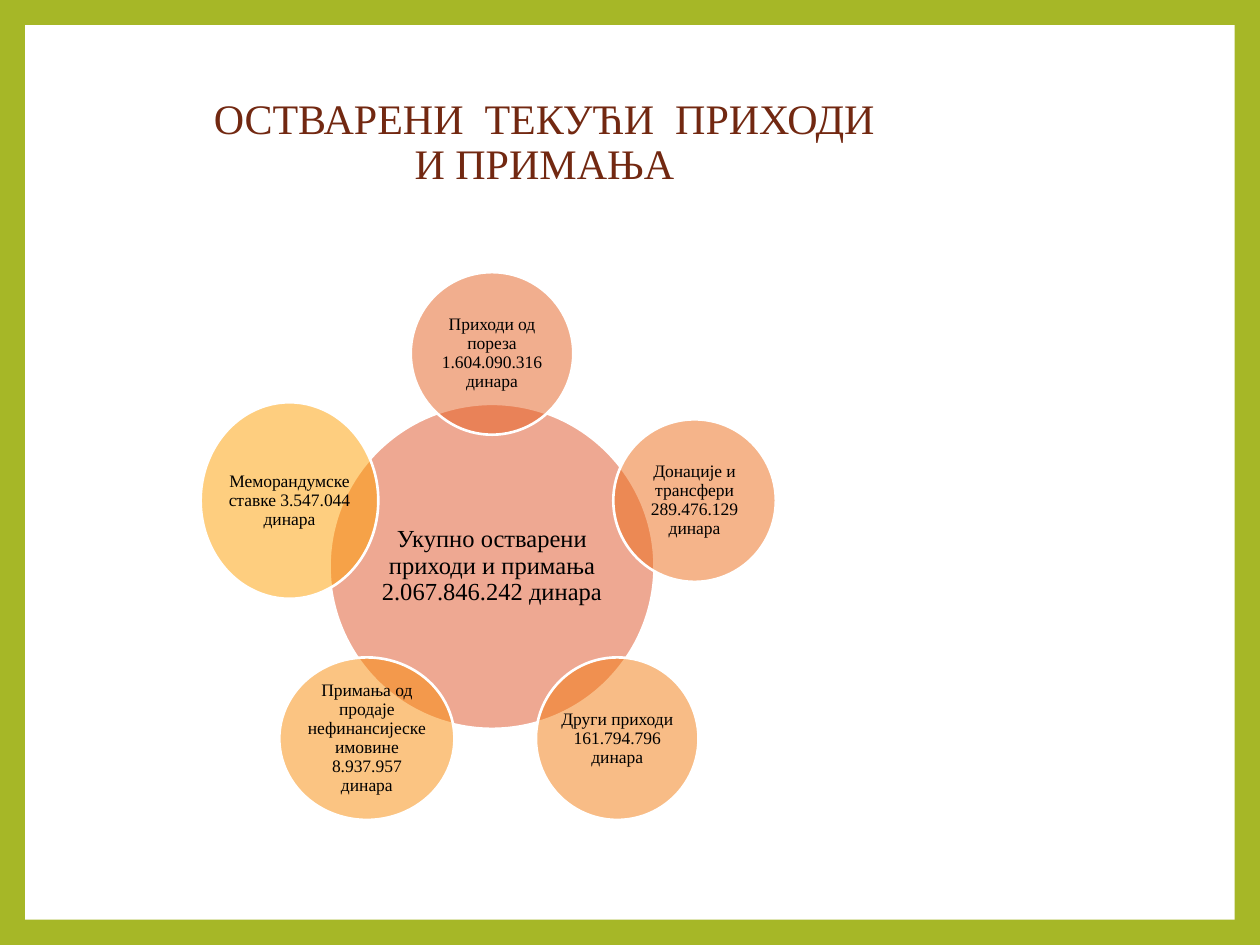
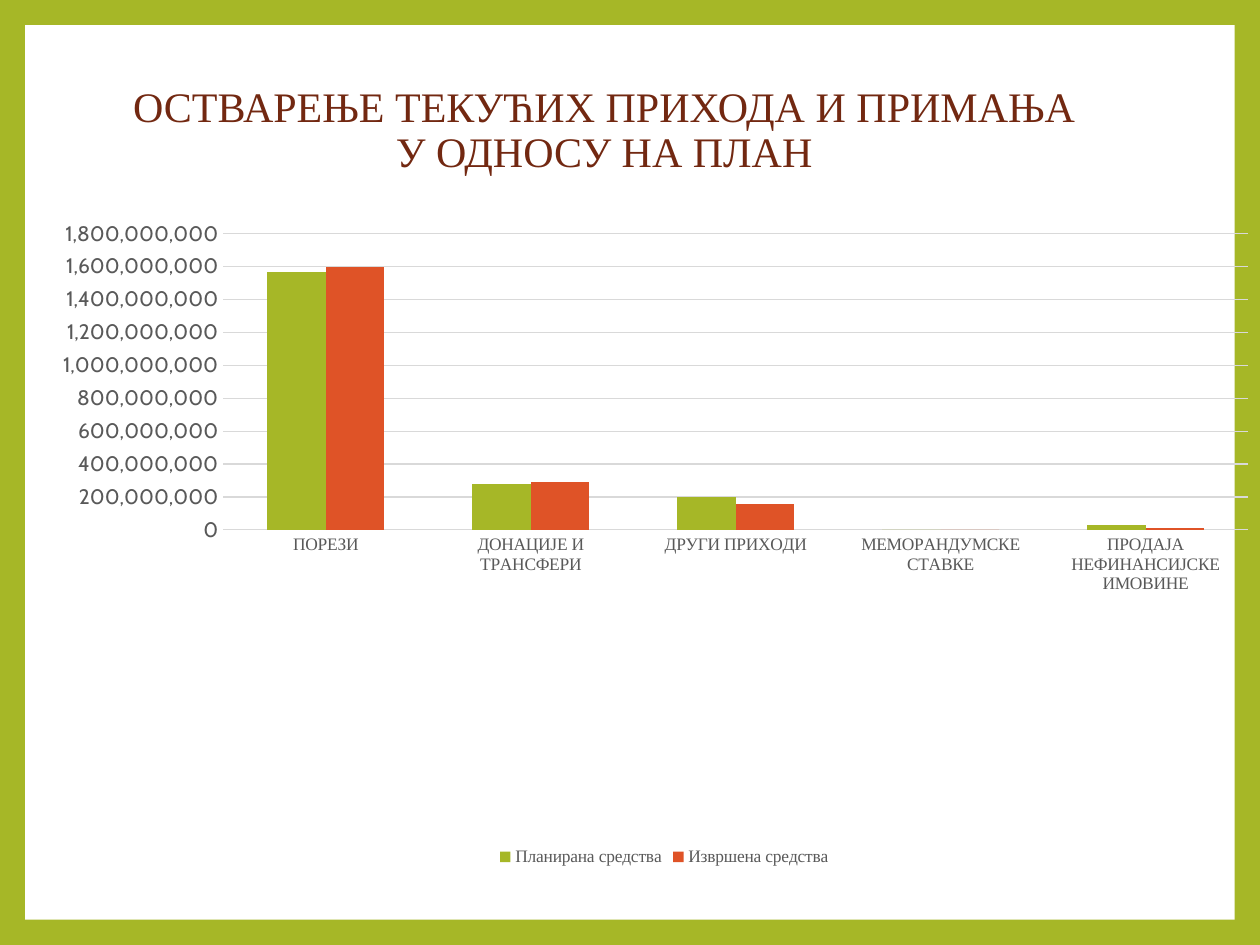
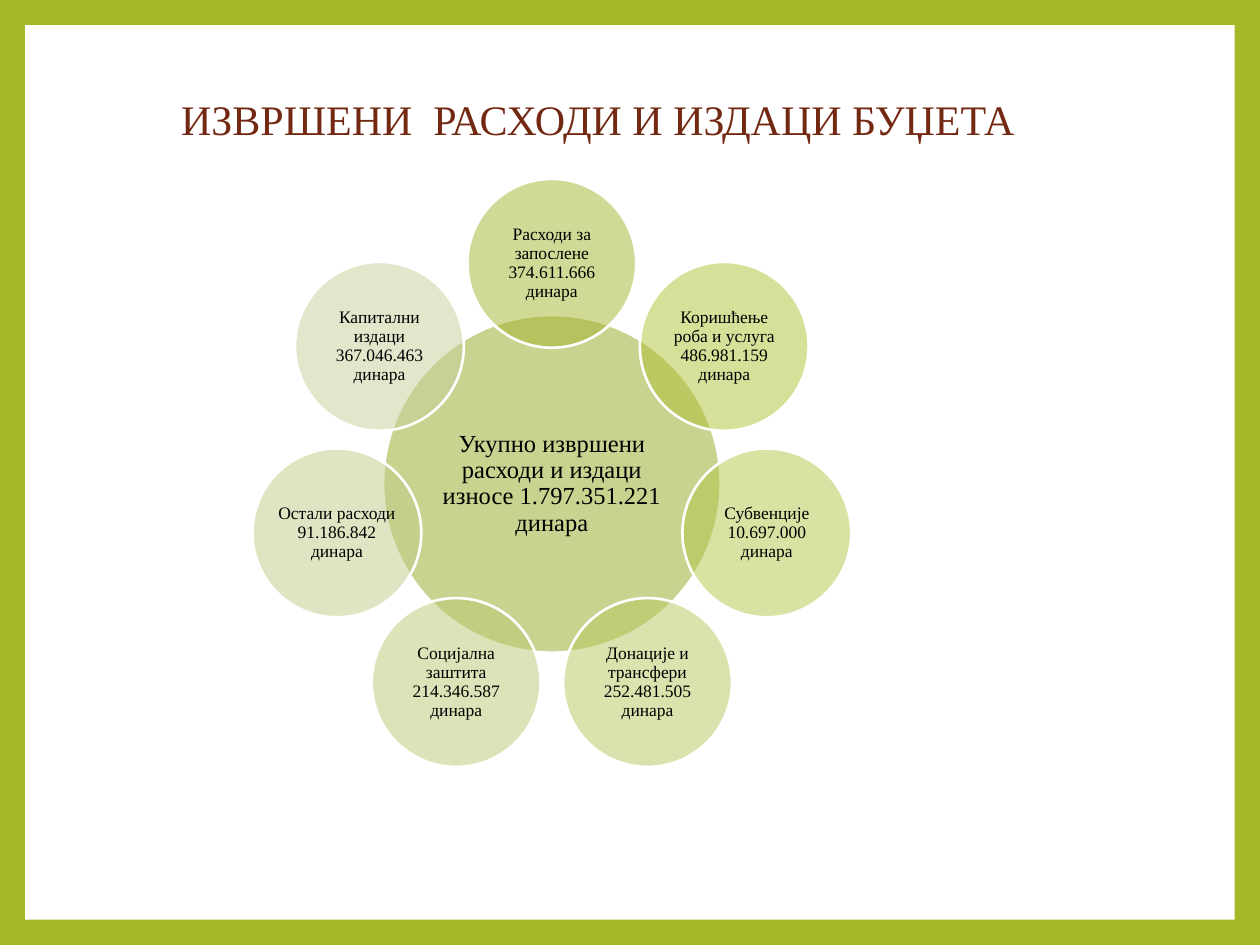
from math import cos, radians, sin

from lxml import etree
from pptx import Presentation
from pptx.chart.data import CategoryChartData
from pptx.dml.color import RGBColor
from pptx.enum.chart import XL_CHART_TYPE, XL_LEGEND_POSITION, XL_TICK_MARK
from pptx.enum.shapes import MSO_SHAPE
from pptx.enum.text import MSO_ANCHOR, PP_ALIGN
from pptx.oxml.ns import qn
from pptx.util import Inches, Pt

COLUMN = XL_CHART_TYPE.COLUMN_CLUSTERED
BOTTOM = XL_LEGEND_POSITION.BOTTOM
NO_TICK = XL_TICK_MARK.NONE
RECT, OVAL = MSO_SHAPE.RECTANGLE, MSO_SHAPE.OVAL
MIDDLE, CENTER = MSO_ANCHOR.MIDDLE, PP_ALIGN.CENTER

COLS, ROWS = 100, 75
SERIF, SANS = "Times New Roman", "Cabin"
GREEN, ORANGE, WHITE, BLACK = "A6B727", "DF5327", "FFFFFF", "000000"
BROWN, GRAY, PALE = "722811", "595959", "D9D9D9"


def paint(code):
    return RGBColor.from_string(code)


def style(font, size, color, name=SERIF):
    font.size, font.name = Pt(size), name
    font.color.rgb = paint(color)


class Deck:
    def __init__(self):
        self.prs = Presentation()
        self.prs.slide_width, self.prs.slide_height = Inches(10), Inches(7.5)
        self.slide = None

    def place(self, left, top, wide, high):
        """Turn grid columns and rows into lengths."""
        col, row = self.prs.slide_width / COLS, self.prs.slide_height / ROWS
        return [round(n) for n in (left * col, top * row, wide * col, high * row)]

    def page(self, title, *box):
        """Start a framed slide with its title."""
        self.slide = self.prs.slides.add_slide(self.prs.slide_layouts[6])
        back = self.slide.background.fill
        back.solid()
        back.fore_color.rgb = paint(GREEN)
        self.shape(RECT, WHITE, 2, 2, COLS - 4, ROWS - 4).line.fill.background()
        label = self.slide.shapes.add_textbox(*self.place(*box))
        self.letter(label, title, 24, BROWN)

    def shape(self, kind, color, *box):
        item = self.slide.shapes.add_shape(kind, *self.place(*box))
        item.shadow.inherit = False
        item.fill.solid()
        item.fill.fore_color.rgb = paint(color)
        return item

    def letter(self, item, text, size, color):
        """Set centred text in a shape or box."""
        frame = item.text_frame
        frame.word_wrap, frame.vertical_anchor = True, MIDDLE
        para = frame.paragraphs[0]
        para.text = text
        para.alignment, para.line_spacing = CENTER, 0.9
        style(para.font, size, color)

    def disc(self, text, color, x, y, wide, high, size=10):
        """Half-clear ellipse centred on x, y."""
        item = self.shape(OVAL, color, x - wide / 2, y - high / 2, wide, high)
        tint = item.element.spPr.find(qn("a:solidFill"))[0]
        etree.SubElement(tint, qn("a:alpha"), val="50000")
        item.line.color.rgb = paint(WHITE)
        item.line.width = Pt(1.5)
        frame = item.text_frame
        frame.margin_left = frame.margin_right = Inches(0.01)
        frame.margin_top = frame.margin_bottom = Inches(0.01)
        self.letter(item, text, size, BLACK)

    def ring(self, x, y, reach, hub, size, parts):
        """Hub disc of twice the part size, with parts spread evenly round it."""
        self.disc(*hub, x, y, 2 * size, 2 * size, 14)
        for i, (text, color, *dims) in enumerate(parts):
            turn = radians(360 * i / len(parts))
            self.disc(text, color, x + reach * sin(turn), y - reach * cos(turn),
                      *(dims or (size, size)))

    def chart(self, cats, series, plot, *box):
        data = CategoryChartData(number_format="#,##0")
        data.categories = cats
        for name, vals, _ in series:
            data.add_series(name, vals)
        chart = self.slide.shapes.add_chart(COLUMN, *self.place(*box), data).chart
        style(chart.font, 10, BLACK, SANS)
        chart.has_title = False
        chart.has_legend = True
        chart.legend.position = BOTTOM
        chart.legend.include_in_layout = False
        style(chart.legend.font, 10, GRAY)

        bars = chart.plots[0]
        bars.gap_width, bars.overlap, bars.vary_by_categories = 150, 0, False
        for item, (_, _, color) in zip(bars.series, series):
            item.format.fill.solid()
            item.format.fill.fore_color.rgb = paint(color)

        cat, val = chart.category_axis, chart.value_axis
        for axis, size, face in ((cat, 10, SERIF), (val, 12, SANS)):
            axis.major_tick_mark = axis.minor_tick_mark = NO_TICK
            axis.format.line.fill.background()
            style(axis.tick_labels.font, size, GRAY, face)
        val.minimum_scale, val.maximum_scale, val.major_unit = 0, 1.8e9, 2e8
        val.tick_labels.number_format = "#,##0"
        val.tick_labels.number_format_is_linked = False
        grid = val.major_gridlines.format.line
        grid.color.rgb, grid.width = paint(PALE), Pt(0.75)
        self.fix(chart, plot)

    def fix(self, chart, plot):
        """Pin the inner plot area to shares of the chart."""
        area = chart.element.chart.plotArea
        for old in area.findall(qn("c:layout")):
            area.remove(old)
        layout = etree.Element(qn("c:layout"))
        area.insert(0, layout)
        manual = etree.SubElement(layout, qn("c:manualLayout"))
        rules = [("layoutTarget", "inner"), ("xMode", "edge"), ("yMode", "edge")]
        for tag, val in rules + list(zip("xywh", plot)):
            etree.SubElement(manual, qn("c:" + tag), val=str(val))


def main():
    deck = Deck()

    deck.page("ОСТВАРЕНИ  ТЕКУЋИ  ПРИХОДИ\vИ ПРИМАЊА", 8.5, 4.2, 69.4, 14.4)
    deck.ring(39.05, 44.95, 16.9,
              ("Укупно остварени приходи и примања 2.067.846.242 динара", ORANGE),
              12.9, [
                  ("Приходи од пореза 1.604.090.316 динара", "E55E1F"),
                  ("Донације и трансфери 289.476.129 динара", "EC6B17"),
                  ("Други приходи 161.794.796 динара", "F27A0F"),
                  ("Примања од продаје нефинансијеске имовине 8.937.957 динара",
                   "F88B07", 13.9, 12.9),
                  ("Меморандумске ставке 3.547.044 динара", "FE9E00", 14.1, 15.6),
              ])

    deck.page("ОСТВАРЕЊЕ ТЕКУЋИХ ПРИХОДА И ПРИМАЊА\vУ ОДНОСУ НА ПЛАН",
              6.7, 5, 82.5, 10.8)
    deck.chart(
        ["ПОРЕЗИ", "ДОНАЦИЈЕ И ТРАНСФЕРИ", "ДРУГИ ПРИХОДИ",
         "МЕМОРАНДУМСКЕ СТАВКЕ", "ПРОДАЈА НЕФИНАНСИЈСКЕ ИМОВИНЕ"],
        [("Планирана средства", [1.57e9, 2.8e8, 2e8, 0, 3e7], GREEN),
         ("Извршена средства", [1.6e9, 2.9e8, 1.6e8, 0, 1e7], ORANGE)],
        (0.13, 0.03, 0.86, 0.45), 5, 17, 95, 52.2)

    deck.page("ИЗВРШЕНИ  РАСХОДИ И ИЗДАЦИ БУЏЕТА", 6.2, 4.7, 82.5, 10)
    deck.ring(43.8, 38.4, 17.5,
              ("Укупно извршени расходи и издаци износе 1.797.351.221 динара",
               "97A623"),
              13.4, [
                  ("Расходи за запослене 374.611.666 динара", "A3B42C"),
                  ("Коришћење роба и услуга 486.981.159 динара", "AFC235"),
                  ("Субвенције 10.697.000 динара", "B4C648"),
                  ("Донације и трансфери 252.481.505 динара", "B8C75E"),
                  ("Социјална заштита 214.346.587 динара", "BCC973"),
                  ("Остали расходи 91.186.842 динара", "C1CC87"),
                  ("Капитални издаци 367.046.463 динара", "C7D09A"),
              ])

    deck.prs.save("out.pptx")


if __name__ == "__main__":
    main()
